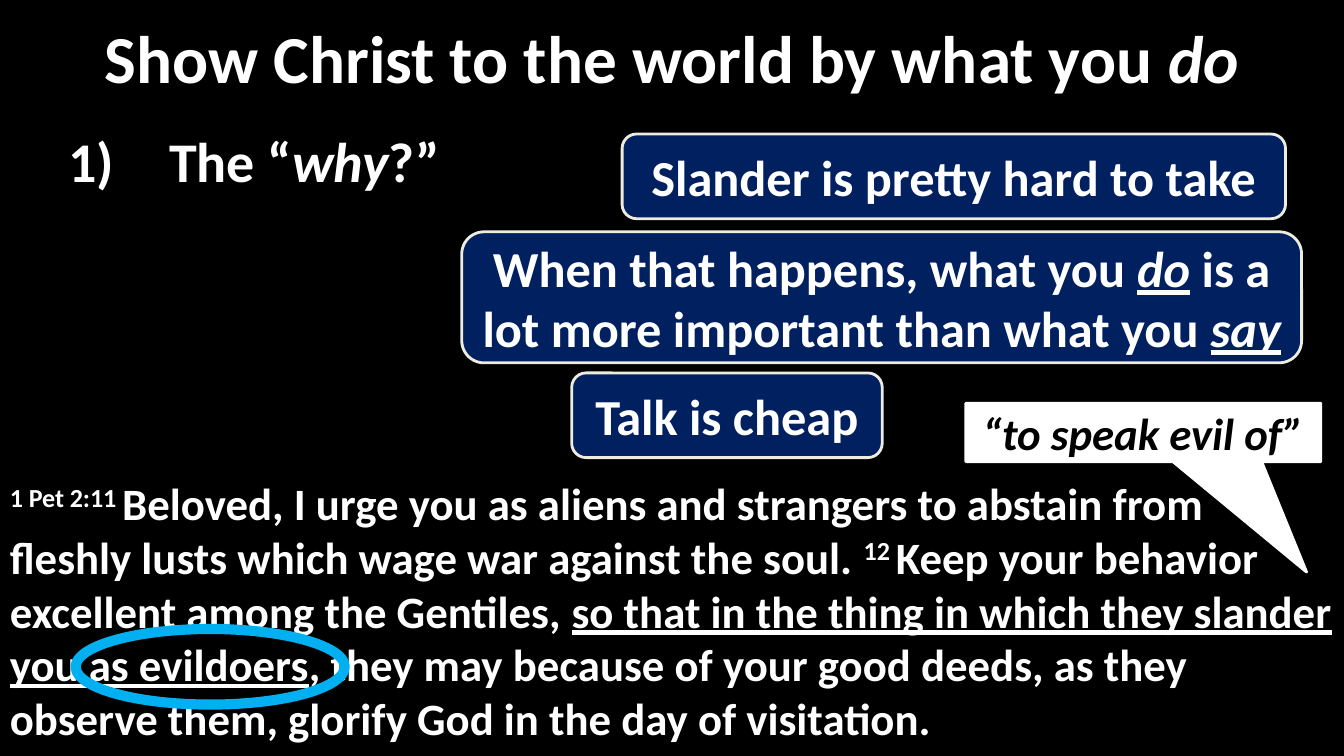
from dataclasses import dataclass
from typing import Optional

import pptx
import pptx.dml.color
import pptx.enum.shapes
import pptx.enum.text
import pptx.oxml
import pptx.oxml.ns
import pptx.util

Inches = pptx.util.Inches
Shape = pptx.enum.shapes.MSO_SHAPE
Align = pptx.enum.text.PP_ALIGN
Anchor = pptx.enum.text.MSO_ANCHOR


@dataclass(frozen=True)
class Theme:
    font: str = "Calibri"
    black: str = "000000"
    white: str = "FFFFFF"
    navy: str = "002060"
    cream: str = "EEECE1"
    sky: str = "00B0F0"
    title: float = 48
    heading: float = 40
    point: float = 36
    verse: float = 32
    outline: float = 2
    ring: float = 7.25


THEME = Theme()


@dataclass(frozen=True)
class Run:
    text: str
    italic: bool = False
    underline: bool = False
    superscript: bool = False


@dataclass(frozen=True)
class Block:
    box: tuple[float, float, float, float]
    runs: tuple[Run, ...]
    size: float
    color: str = THEME.white
    align: Align = Align.CENTER
    anchor: Anchor = Anchor.MIDDLE
    shape: Optional[Shape] = None
    adjustments: tuple[float, ...] = ()
    fill: Optional[str] = None
    line: Optional[str] = None
    line_width: float = THEME.outline
    numbered: bool = False


def rgb(color: str) -> pptx.dml.color.RGBColor:
    return pptx.dml.color.RGBColor.from_string(color)


def point(left: float, top: float, width: float, height: float, *runs: Run) -> Block:
    return Block((left, top, width, height), runs, THEME.point,
                 shape=Shape.ROUNDED_RECTANGULAR_CALLOUT,
                 adjustments=(-0.22, 0.5, 0.17), fill=THEME.navy, line=THEME.cream)


BLOCKS = (
    Block((0, 4.67, 13.33, 2.84), (
        Run("1 Pet 2:11 ", superscript=True),
        Run("Beloved, I urge you as aliens and strangers to abstain from "
            "fleshly lusts which wage war against the soul. "),
        Run("12 ", superscript=True),
        Run("Keep your behavior excellent among the Gentiles, "),
        Run("so that in the thing in which they slander you as evildoers", underline=True),
        Run(", they may because of your good deeds, as they observe them, "
            "glorify God in the day of visitation."),
    ), THEME.verse, align=Align.LEFT, anchor=Anchor.TOP,
        shape=Shape.RECTANGLE, fill=THEME.black),
    Block((0.58, 0.04, 12.17, 1.05),
          (Run("Show Christ to the world by what you "), Run("do", italic=True)),
          THEME.title),
    Block((0.58, 1.21, 12.17, 0.78),
          (Run("The “"), Run("why", italic=True), Run("?”")),
          THEME.heading, align=Align.LEFT, anchor=Anchor.TOP, numbered=True),
    Block((9.58, 4, 3.52, 0.58), (Run("“to speak evil of”", italic=True),),
          THEME.verse, THEME.black, shape=Shape.RECTANGULAR_CALLOUT,
          adjustments=(0.46, 2.39), fill=THEME.white, line=THEME.white),
    point(6.17, 1.33, 6.58, 0.84, Run("Slander is pretty hard to take")),
    point(4.58, 2.3, 8.33, 1.3,
          Run("When that happens, what you "),
          Run("do", italic=True, underline=True),
          Run(" is a lot more important than what you "),
          Run("say", italic=True, underline=True)),
    point(5.67, 3.7, 3.08, 0.84, Run("Talk is cheap")),
    Block((0.75, 6.24, 2.67, 0.75), (), THEME.verse, shape=Shape.OVAL,
          line=THEME.sky, line_width=THEME.ring),
)


def style_shape(s, block: Block) -> None:
    s.shadow.inherit = False
    for i, value in enumerate(block.adjustments):
        s.adjustments[i] = value
    if block.fill:
        s.fill.solid()
        s.fill.fore_color.rgb = rgb(block.fill)
    else:
        s.fill.background()
    if block.line:
        s.line.color.rgb = rgb(block.line)
        s.line.width = pptx.util.Pt(block.line_width)
    else:
        s.line.fill.background()


def number_paragraph(p) -> None:
    pPr = p._p.get_or_add_pPr()
    pPr.set("marL", str(Inches(1)))
    pPr.set("indent", str(Inches(-1)))
    ns = pptx.oxml.ns.nsdecls("a")
    for xml in (f'<a:buFont {ns} typeface="+mj-lt"/>',
                f'<a:buAutoNum {ns} type="arabicParenR"/>'):
        pPr.insert_element_before(pptx.oxml.parse_xml(xml), "a:tabLst", "a:defRPr", "a:extLst")


def write_text(s, block: Block) -> None:
    tf = s.text_frame
    tf.word_wrap = True
    tf.vertical_anchor = block.anchor
    p = tf.paragraphs[0]
    p.alignment = block.align
    p.font.name = THEME.font
    p.font.size = pptx.util.Pt(block.size)
    p.font.bold = True
    p.font.color.rgb = rgb(block.color)
    if block.numbered:
        number_paragraph(p)
    for run in block.runs:
        r = p.add_run()
        r.text = run.text
        r.font.name = THEME.font
        r.font.size = pptx.util.Pt(block.size)
        r.font.bold = True
        r.font.color.rgb = rgb(block.color)
        r.font.italic = run.italic
        r.font.underline = run.underline
        if run.superscript:
            r._r.get_or_add_rPr().set("baseline", "30000")


def draw_block(shapes, block: Block) -> None:
    box = [Inches(value) for value in block.box]
    if block.shape is None:
        s = shapes.add_textbox(*box)
    else:
        s = shapes.add_shape(block.shape, *box)
        style_shape(s, block)
    if block.runs:
        write_text(s, block)


def main() -> None:
    prs = pptx.Presentation()
    prs.slide_width, prs.slide_height = Inches(13.33), Inches(7.5)
    slide = prs.slides.add_slide(prs.slide_layouts[6])
    slide.background.fill.solid()
    slide.background.fill.fore_color.rgb = rgb(THEME.black)
    for block in BLOCKS:
        draw_block(slide.shapes, block)
    prs.save("out.pptx")


if __name__ == "__main__":
    main()
